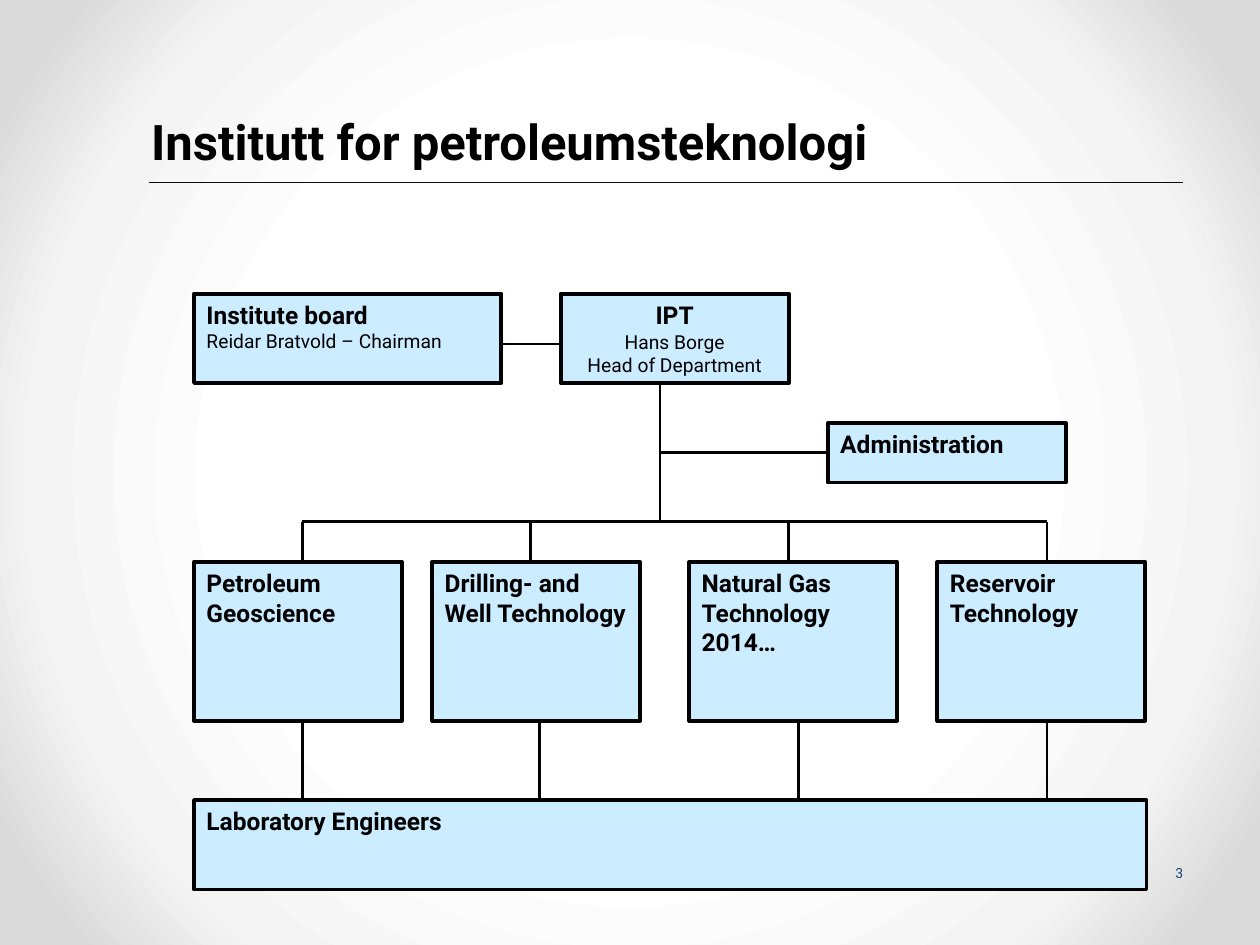
from typing import NamedTuple

from lxml import etree
from pptx import Presentation
from pptx.dml.color import RGBColor
from pptx.enum import shapes, text
from pptx.oxml import ns
from pptx.util import Inches, Pt

FONT = "Roboto"
BLACK = RGBColor(0x00, 0x00, 0x00)
RULE = RGBColor(0x0D, 0x0D, 0x0D)
NAVY = RGBColor(0x19, 0x43, 0x77)
PALE_BLUE = RGBColor(0xCC, 0xEC, 0xFF)
BACKDROP_STOPS = ((50, "FFFFFF"), (76, "F4F4F4"), (92, "DADADA"))

LEFT, ALIGN_CENTER, RIGHT = text.PP_ALIGN.LEFT, text.PP_ALIGN.CENTER, text.PP_ALIGN.RIGHT
TOP, MIDDLE, BOTTOM = text.MSO_ANCHOR.TOP, text.MSO_ANCHOR.MIDDLE, text.MSO_ANCHOR.BOTTOM


class Unit(NamedTuple):
    """A box of the chart: its heading and the lines below it."""
    left: float
    top: float
    width: float
    height: float
    heading: str
    details: tuple = ()
    align: int = LEFT
    anchor: int = TOP


class Link(NamedTuple):
    x1: float
    y1: float
    x2: float
    y2: float
    weight: float = 1.5
    color: RGBColor = BLACK


# Levels of the chart
HEAD_TOP, HEAD_HEIGHT = 2.33, 0.71
BUS_Y = 4.14
GROUP_TOP, GROUP_WIDTH, GROUP_HEIGHT = 4.46, 1.65, 1.26
LAB_TOP = 6.35
TRUNK_X = 5.24

GROUPS = (
    (1.54, "Petroleum Geoscience"),
    (3.43, "Drilling- and Well Technology"),
    (5.47, "Natural Gas Technology 2014…"),
    (7.44, "Reservoir Technology"),
)
DROPS_TO_GROUPS = (2.4, 4.21, 6.26, 8.31)
DROPS_TO_LAB = ((2.4, 5.72), (4.28, 5.74), (6.34, 5.74), (8.31, 5.71))

LINKS = [
    Link(1.18, 1.45, 9.39, 1.45, 0.25, RULE),
    Link(3.35, 2.73, 4.61, 2.73),
    Link(TRUNK_X, HEAD_TOP + HEAD_HEIGHT, TRUNK_X, BUS_Y, 1.25),
    Link(TRUNK_X, 3.59, 6.57, 3.59),
    Link(DROPS_TO_GROUPS[0], BUS_Y, DROPS_TO_GROUPS[-1], BUS_Y),
    *(Link(x, BUS_Y, x, GROUP_TOP) for x in DROPS_TO_GROUPS),
    *(Link(x, y, x, LAB_TOP) for x, y in DROPS_TO_LAB),
]
UNITS = [
    Unit(1.54, HEAD_TOP, 2.44, HEAD_HEIGHT, "Institute board",
         ("Reidar Bratvold – Chairman",)),
    Unit(4.45, HEAD_TOP, 1.81, HEAD_HEIGHT, "IPT",
         ("Hans Borge", "Head of Department"), ALIGN_CENTER, MIDDLE),
    Unit(6.57, 3.36, 1.89, 0.47, "Administration"),
    *(Unit(x, GROUP_TOP, GROUP_WIDTH, GROUP_HEIGHT, name) for x, name in GROUPS),
    Unit(1.54, LAB_TOP, 7.56, HEAD_HEIGHT, "Laboratory Engineers"),
]


def write(frame, words: str, *, size: float, bold: bool = False,
          color: RGBColor = BLACK, align: int = LEFT, new: bool = False) -> None:
    """Write one paragraph, in the first one of the frame unless new."""
    paragraph = frame.add_paragraph() if new else frame.paragraphs[0]
    paragraph.alignment = align
    run = paragraph.add_run()
    run.text = words
    run.font.name, run.font.size, run.font.bold = FONT, Pt(size), bold
    run.font.color.rgb = color


def add_label(slide, left: float, top: float, width: float, height: float,
              words: str, anchor: int = TOP, **style) -> None:
    frame = slide.shapes.add_textbox(
        Inches(left), Inches(top), Inches(width), Inches(height)).text_frame
    frame.word_wrap = True
    frame.vertical_anchor = anchor
    frame.margin_left = frame.margin_right = frame.margin_top = frame.margin_bottom = 0
    write(frame, words, **style)


def add_link(slide, link: Link) -> None:
    line = slide.shapes.add_connector(
        shapes.MSO_CONNECTOR.STRAIGHT, Inches(link.x1), Inches(link.y1),
        Inches(link.x2), Inches(link.y2))
    line.line.color.rgb = link.color
    line.line.width = Pt(link.weight)
    etree.SubElement(line.element.spPr, ns.qn("a:effectLst"))


def add_unit(slide, unit: Unit) -> None:
    box = slide.shapes.add_shape(
        shapes.MSO_SHAPE.RECTANGLE, Inches(unit.left), Inches(unit.top),
        Inches(unit.width), Inches(unit.height))
    box.shadow.inherit = False
    box.fill.solid()
    box.fill.fore_color.rgb = PALE_BLUE
    box.line.color.rgb = BLACK
    box.line.width = Pt(2.25)
    frame = box.text_frame
    frame.word_wrap = True
    frame.vertical_anchor = unit.anchor
    write(frame, unit.heading, size=14, bold=True, align=unit.align)
    for detail in unit.details:
        write(frame, detail, size=11, align=unit.align, new=True)


def paint_backdrop(slide) -> None:
    """Fill the background with a circular gradient."""
    slide.background.fill.gradient()
    gradient = next(slide.element.iter(ns.qn("a:gradFill")))
    for child in list(gradient):
        gradient.remove(child)
    stops = etree.SubElement(gradient, ns.qn("a:gsLst"))
    for position, color in BACKDROP_STOPS:
        stop = etree.SubElement(stops, ns.qn("a:gs"), pos=str(position * 1000))
        etree.SubElement(stop, ns.qn("a:srgbClr"), val=color)
    circle = etree.SubElement(gradient, ns.qn("a:path"), path="circle")
    etree.SubElement(circle, ns.qn("a:fillToRect"),
                     {side: "50000" for side in "ltrb"})


def main() -> None:
    deck = Presentation()
    deck.slide_width, deck.slide_height = Inches(10), Inches(7.5)
    slide = deck.slides.add_slide(deck.slide_layouts[6])
    paint_backdrop(slide)

    # Title and page number
    add_label(slide, 1.2, 0.12, 8.21, 1.23, "Institutt for petroleumsteknologi",
              BOTTOM, size=28, bold=True)
    add_label(slide, 8.97, 6.86, 0.42, 0.13, "3", size=8, color=NAVY, align=RIGHT)

    # Organisation chart, links behind the boxes
    for link in LINKS:
        add_link(slide, link)
    for unit in UNITS:
        add_unit(slide, unit)

    deck.save("out.pptx")


if __name__ == "__main__":
    main()
